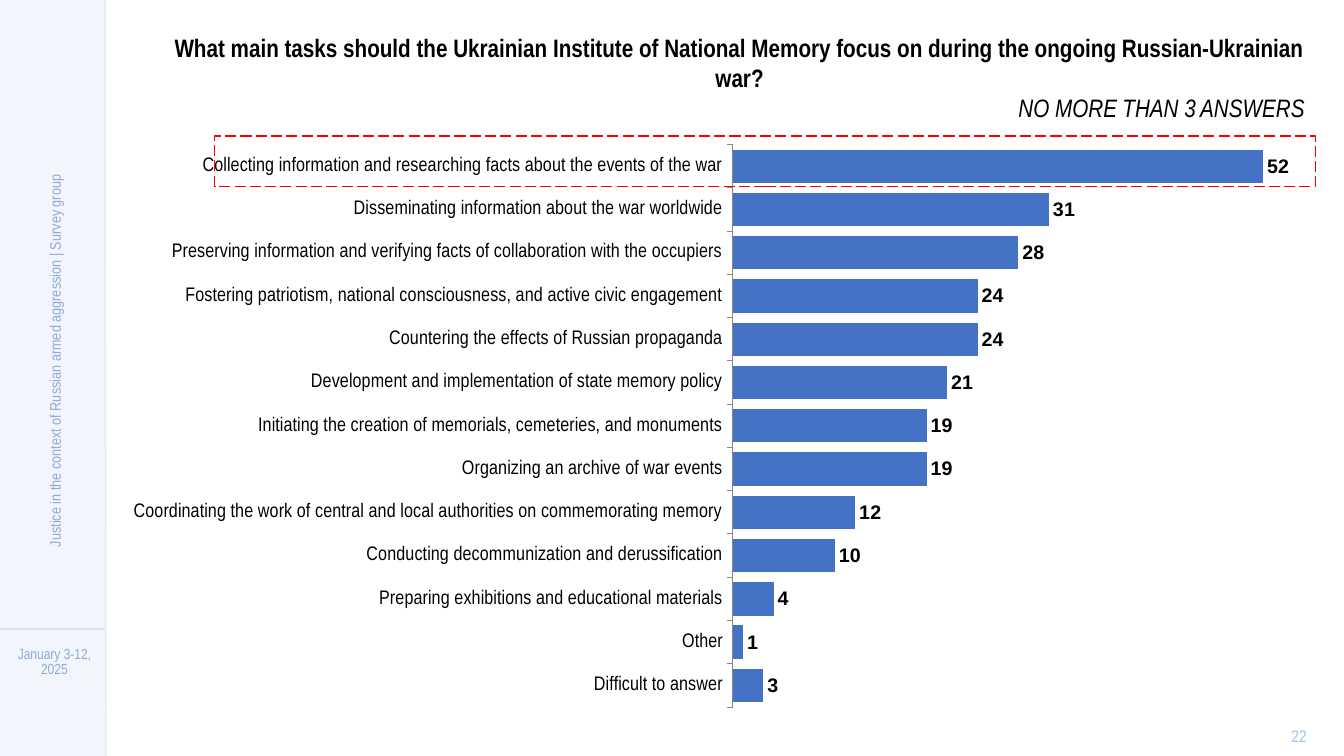
from lxml.etree import SubElement
from pptx import Presentation
from pptx.chart.data import CategoryChartData
from pptx.dml.color import RGBColor
from pptx.enum.chart import XL_CHART_TYPE, XL_LABEL_POSITION, XL_TICK_MARK
from pptx.enum.dml import MSO_LINE
from pptx.enum.shapes import MSO_CONNECTOR, MSO_SHAPE
from pptx.enum.text import MSO_ANCHOR, PP_ALIGN
from pptx.oxml import parse_xml
from pptx.oxml.ns import nsdecls, qn
from pptx.util import Inches, Pt

# Content
QUESTION = ("What main tasks should the Ukrainian Institute of National Memory "
            "focus on during the ongoing Russian-Ukrainian war?")
ANSWER_LIMIT = "NO MORE THAN 3 ANSWERS"
SURVEY_TITLE = "Justice in the context of Russian armed aggression | Survey group"
SURVEY_DATES = "January 3-12, 2025"
PAGE_NUMBER = "22"
ANSWERS = [
    ("Collecting information and researching facts about the events of the war", 52),
    ("Disseminating information about the war worldwide", 31),
    ("Preserving information and verifying facts of collaboration with the occupiers", 28),
    ("Fostering patriotism, national consciousness, and active civic engagement", 24),
    ("Countering the effects of Russian propaganda", 24),
    ("Development and implementation of state memory policy", 21),
    ("Initiating the creation of memorials, cemeteries, and monuments", 19),
    ("Organizing an archive of war events", 19),
    ("Coordinating the work of central and local authorities on commemorating memory", 12),
    ("Conducting decommunization and derussification", 10),
    ("Preparing exhibitions and educational materials", 4),
    ("Other", 1),
    ("Difficult to answer", 3),
]
NARROW = "Arial Narrow"
PLOT_AREA = {"x": 0.486, "y": 0.15, "w": 0.53, "h": 0.85}
SIDEBAR_WIDTH = 1.05
SIDEBAR_RULES = [  # start x, start y, end x, end y, colour
    (SIDEBAR_WIDTH, 6.24, 0, 6.24, "DAE3F3"),
    (1.04, 0, SIDEBAR_WIDTH, 7.5, "DEEBF7"),
]


def color(hex_code):
    return RGBColor.from_string(hex_code)


def style_font(font, size, hex_code, name=NARROW, bold=False, italic=False):
    font.size, font.name = Pt(size), name
    font.bold, font.italic = bold, italic
    font.color.rgb = color(hex_code)


def add_rectangle(page, left, top, width, height):
    shape = page.shapes.add_shape(MSO_SHAPE.RECTANGLE, Inches(left), Inches(top),
                                  Inches(width), Inches(height))
    shape.shadow.inherit = False
    return shape


def add_text(page, left, top, width, height, lines, size, hex_code,
             anchor=MSO_ANCHOR.MIDDLE, spacing=None):
    """Each line is (text, alignment, bold, italic)."""
    box = page.shapes.add_textbox(Inches(left), Inches(top), Inches(width), Inches(height))
    frame = box.text_frame
    frame.word_wrap = True
    frame.vertical_anchor = anchor
    for index, (text, alignment, bold, italic) in enumerate(lines):
        para = frame.add_paragraph() if index else frame.paragraphs[0]
        para.text = text
        para.alignment = alignment
        if spacing:
            para.line_spacing = Pt(spacing)
        style_font(para.font, size, hex_code, bold=bold, italic=italic)
    return box


def add_sidebar(page):
    panel = add_rectangle(page, 0, 0, SIDEBAR_WIDTH, 7.5)
    panel.fill.solid()
    panel.fill.fore_color.rgb = color("DAE3F3")
    tint = panel.fill._xPr.find(qn("a:solidFill"))[0]
    SubElement(tint, qn("a:alpha")).set("val", "33000")
    panel.line.fill.background()

    for start_x, start_y, end_x, end_y, hex_code in SIDEBAR_RULES:
        rule = page.shapes.add_connector(MSO_CONNECTOR.STRAIGHT, Inches(start_x),
                                         Inches(start_y), Inches(end_x), Inches(end_y))
        rule.line.color.rgb = color(hex_code)
        rule.line.width = Pt(1)
        SubElement(rule._element.spPr, qn("a:effectLst"))

    add_text(page, 0, 6.42, 1.08, 0.3, [(SURVEY_DATES, PP_ALIGN.CENTER, False, False)],
             10.5, "8FAADC", spacing=11)
    title = add_text(page, -2.06, 3.43, 5.11, 0.3,
                     [(SURVEY_TITLE, PP_ALIGN.CENTER, False, False)],
                     11, "8FAADC", spacing=20)
    title.rotation = 270


def add_answer_chart(page):
    data = CategoryChartData(number_format="0")
    data.categories = [answer for answer, share in ANSWERS]
    data.add_series("Series 1", [share for answer, share in ANSWERS])
    chart = page.shapes.add_chart(XL_CHART_TYPE.BAR_CLUSTERED, Inches(0.99), Inches(0.45),
                                  Inches(13.36), Inches(6.57), data).chart
    chart.has_legend = False
    chart.has_title = False
    style_font(chart.font, 18, "000000", name="Arial")

    # Axes
    answers_axis = chart.category_axis
    answers_axis.reverse_order = True
    answers_axis.has_major_gridlines = False
    answers_axis.major_tick_mark = XL_TICK_MARK.OUTSIDE
    answers_axis.format.line.color.rgb = color("868686")
    style_font(answers_axis.tick_labels.font, 14, "000000")
    share_axis = chart.value_axis
    share_axis.minimum_scale, share_axis.maximum_scale = 0, 70
    share_axis.has_major_gridlines = False
    share_axis.visible = False

    # Bars and their labels
    plot = chart.plots[0]
    plot.gap_width = 30
    plot.vary_by_categories = False
    bars = plot.series[0]
    bars.format.fill.solid()
    bars.format.fill.fore_color.rgb = color("4472C4")
    labels = bars.data_labels
    labels.show_value = True
    labels.number_format, labels.number_format_is_linked = "0", False
    labels.position = XL_LABEL_POSITION.OUTSIDE_END
    style_font(labels.font, 14, "000000", name="Arial", bold=True)

    # Fixed place of the plot inside the chart
    plot_area = chart._chartSpace.chart.plotArea
    for layout in plot_area.findall(qn("c:layout")):
        plot_area.remove(layout)
    modes = "".join(f'<c:{key}Mode val="edge"/>' for key in "xy")
    places = "".join(f'<c:{key} val="{value}"/>' for key, value in PLOT_AREA.items())
    plot_area.insert(0, parse_xml(
        f'<c:layout {nsdecls("c")}><c:manualLayout><c:layoutTarget val="inner"/>'
        f'{modes}{places}</c:manualLayout></c:layout>'))


def main():
    deck = Presentation()
    deck.slide_width, deck.slide_height = Inches(13.33), Inches(7.5)
    page = deck.slides.add_slide(deck.slide_layouts[6])

    add_sidebar(page)
    add_text(page, 12.56, 7.19, 0.65, 0.22, [(PAGE_NUMBER, PP_ALIGN.CENTER, False, False)],
             12, "9DC3E6")
    add_answer_chart(page)

    # Frame around the leading answer
    frame = add_rectangle(page, 2.13, 1.35, 10.92, 0.5)
    frame.fill.background()
    frame.line.color.rgb = color("FF0000")
    frame.line.width = Pt(1)
    frame.line.dash_style = MSO_LINE.LONG_DASH

    # Heading
    add_text(page, 1.63, 0.27, 11.41, 1.01,
             [(QUESTION, PP_ALIGN.CENTER, True, False),
              (ANSWER_LIMIT, PP_ALIGN.RIGHT, False, True)],
             18, "000000", anchor=MSO_ANCHOR.TOP)
    deck.save("out.pptx")


if __name__ == "__main__":
    main()
